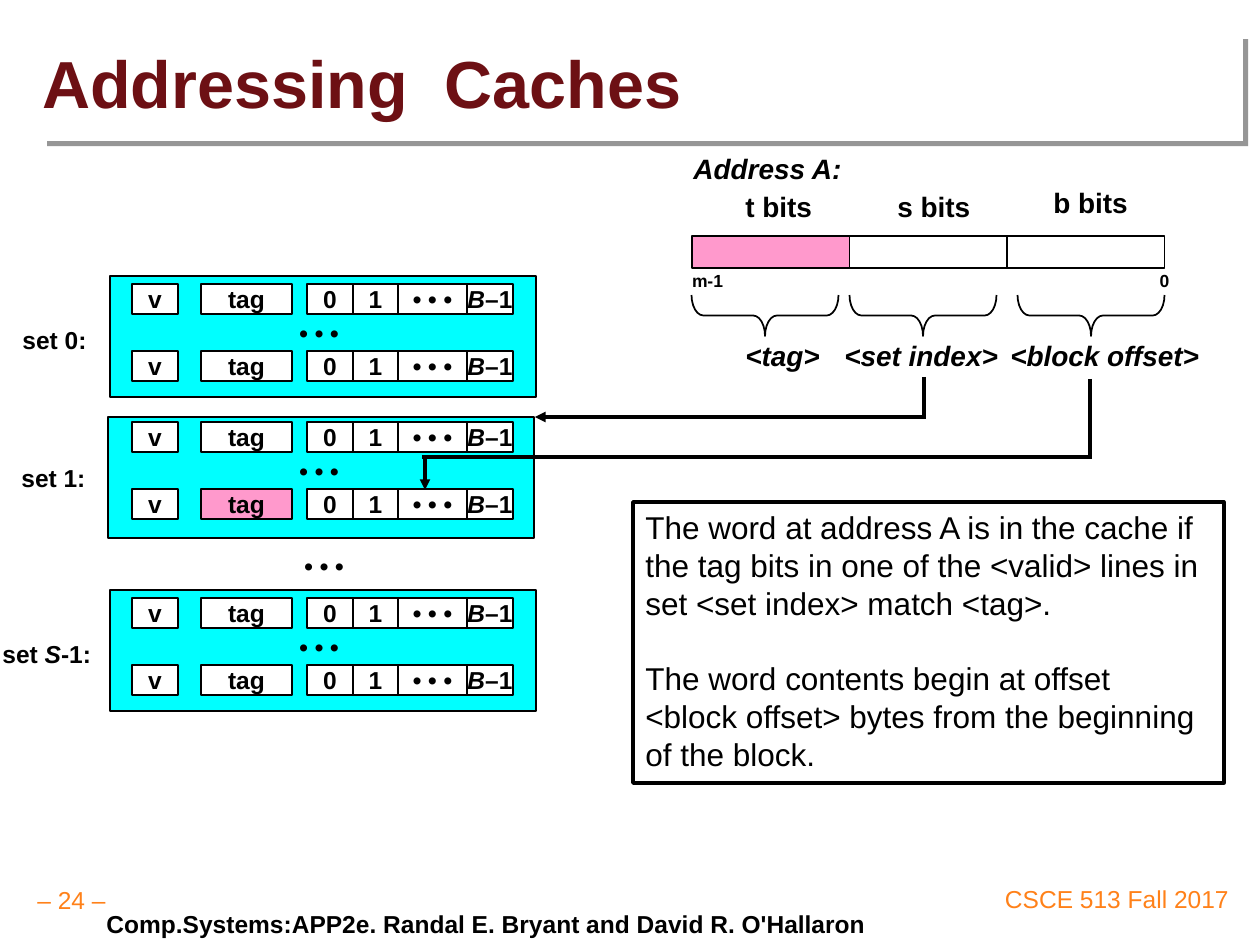
from lxml import etree
from pptx import Presentation
from pptx.dml.color import RGBColor
from pptx.enum.shapes import MSO_CONNECTOR, MSO_SHAPE
from pptx.enum.text import MSO_ANCHOR, MSO_AUTO_SIZE, PP_ALIGN
from pptx.oxml import parse_xml
from pptx.oxml.ns import nsdecls, qn
from pptx.util import Emu, Pt

SCALE = 914400 / 126
FONT = "Arial"
RECT, BRACE = MSO_SHAPE.RECTANGLE, MSO_SHAPE.RIGHT_BRACE
LINE = MSO_CONNECTOR.STRAIGHT
LEFT, CENTER = PP_ALIGN.LEFT, PP_ALIGN.CENTER
TOP, MIDDLE = MSO_ANCHOR.TOP, MSO_ANCHOR.MIDDLE

BLACK = RGBColor(0, 0, 0)
WHITE = RGBColor(255, 255, 255)
CYAN = RGBColor(0, 255, 255)
PINK = RGBColor(0xFF, 0x99, 0xCC)
MAROON = RGBColor(0x6D, 0x10, 0x14)
ORANGE = RGBColor(0xFF, 0x81, 0x19)

DOTS = "• • •"
LAST = [("B", True), ("–1", False)]
CELLS = [("v", 132, 46), ("tag", 201, 91), ("0", 307, 46),
         ("1", 353, 45), (DOTS, 398, 69), (LAST, 467, 46)]
ROW_GAP, ROW_H = 67, 30


def px(n):
    return Emu(round(n * SCALE))


def write(shape, text, size=14, align=LEFT, anchor=MIDDLE, bold=True,
          italic=False, color=BLACK, inset=None):
    """Fill a shape with one paragraph: a string, or (text, italic) runs."""
    frame = shape.text_frame
    frame.word_wrap = False
    frame.vertical_anchor = anchor
    if inset is not None:
        frame.margin_left = frame.margin_right = px(inset)
        frame.margin_top = frame.margin_bottom = px(inset)
    para = frame.paragraphs[0]
    para.alignment = align
    if isinstance(text, str):
        para.text = text
        para.font.italic = italic
    else:
        for part, slant in text:
            run = para.add_run()
            run.text = part
            run.font.italic = slant
    style(para, size, bold, color)
    return para


def style(para, size, bold, color):
    font = para.font
    font.name, font.size, font.bold = FONT, Pt(size), bold
    font.color.rgb = color


def add_label(slide, text, x, y, w, h, **look):
    box = slide.shapes.add_textbox(px(x), px(y), px(w), px(h))
    return write(box, text, **look)


def add_box(slide, x, y, w, h, fill=None, width=1, kind=RECT):
    box = slide.shapes.add_shape(kind, px(x), px(y), px(w), px(h))
    box.shadow.inherit = False
    if fill is None:
        box.fill.background()
    else:
        box.fill.solid()
        box.fill.fore_color.rgb = fill
    box.line.color.rgb = BLACK
    box.line.width = Pt(width)
    return box


def add_line(slide, x1, y1, x2, y2, arrow=False):
    line = slide.shapes.add_connector(LINE, px(x1), px(y1), px(x2), px(y2))
    line.line.color.rgb = BLACK
    line.line.width = Pt(2)
    if arrow:
        tip = etree.SubElement(line.line._get_or_add_ln(), qn("a:tailEnd"))
        tip.set("type", "triangle")
    etree.SubElement(line._element.spPr, qn("a:effectLst"))


def add_title(slide):
    title = slide.shapes.title
    title.left, title.top = px(42), px(34)
    title.width, title.height = px(1201), px(107)
    title.fill.solid()
    title.fill.fore_color.rgb = WHITE
    title.text_frame.auto_size = MSO_AUTO_SIZE.NONE
    para = write(title, "Addressing  Caches", 38, color=MAROON, inset=0)
    para.line_spacing = 0.87
    title._element.spPr.append(parse_xml(
        f'<a:effectLst {nsdecls("a")}><a:outerShdw dist="53340" dir="2700000"'
        ' algn="ctr" rotWithShape="0"><a:srgbClr val="969696"/>'
        '</a:outerShdw></a:effectLst>'))


def add_address(slide):
    add_label(slide, "Address A:", 680, 145, 175, 47, size=16,
              align=CENTER, italic=True)
    for i, fill in enumerate((PINK, None, None)):
        add_box(slide, 692 + 157.5 * i, 236, 157.5, 32, fill)
    for text, x, y, w in (("t bits", 733, 183, 92), ("s bits", 885, 183, 98),
                          ("b bits", 1041, 179, 100)):
        add_label(slide, text, x, y, w, 45, size=16, anchor=TOP)
    for text, x, w in (("m-1", 679, 57), ("0", 1147, 35)):
        add_label(slide, text, x, 263, w, 34, size=10, align=CENTER)
    for text, x, w, mid in (("<tag>", 733, 100, 765),
                            ("<set index>", 832, 179, 923),
                            ("<block offset>", 998, 215, 1091)):
        add_label(slide, text, x, 332, w, 45, size=16, anchor=TOP, italic=True)
        brace = add_box(slide, mid - 20.5, 242, 41, 147, kind=BRACE)
        brace.adjustments[0] = 0.29
        brace.rotation = 90


def add_set(slide, name, x, y, row, label_x, label_w, hit=False):
    """Draw one cache set; hit marks the tag of its last line."""
    add_box(slide, x, y, 426, 121, CYAN)
    for i in range(2):
        for text, left, w in CELLS:
            fill = PINK if hit and i == 1 and text == "tag" else WHITE
            cell = add_box(slide, left, row + ROW_GAP * i, w, ROW_H, fill)
            write(cell, text, align=CENTER)
    add_label(slide, name, label_x, row + 35, label_w, 42)
    add_label(slide, DOTS, 287, row + 34, 68, ROW_H)


def add_note(slide):
    box = add_box(slide, 633, 502, 591, 281, width=2)
    write(box, "The word at address A is in the cache if\v"
          "the tag bits in one of the <valid> lines in\v"
          "set <set index> match <tag>.", 18, anchor=TOP, bold=False)
    second = box.text_frame.add_paragraph()
    second.text = ("The word contents begin at offset\v"
                   "<block offset> bytes from the beginning\vof the block.")
    second.alignment = LEFT
    second.space_before = Pt(21.5)
    style(second, 18, False, BLACK)


def add_footer(slide):
    for text, x, y, w in (("– 24 –", 30, 882, 83),
                          ("CSCE 513 Fall 2017", 998, 881, 238)):
        para = add_label(slide, text, x, y, w, 39, align=CENTER, bold=False,
                         color=ORANGE, inset=6)
        para.line_spacing = 0.9
    add_label(slide, "Comp.Systems:APP2e. Randal E. Bryant and "
              "David R. O'Hallaron", 94, 903, 789, 42, anchor=TOP)


def main():
    deck = Presentation()
    deck.slide_width, deck.slide_height = px(1260), px(945)
    slide = deck.slides.add_slide(deck.slide_layouts[5])
    add_title(slide)
    add_address(slide)
    add_set(slide, "set 0:", 110, 276, 284, 10, 92)
    add_set(slide, "set 1:", 108, 417, 422, 9, 92, hit=True)
    add_set(slide, [("set ", False), ("S", True), ("-1:", False)],
            110, 590, 598, -10, 120)
    add_label(slide, DOTS, 292, 551, 68, ROW_H)
    add_line(slide, 924, 377, 924, 419)
    add_line(slide, 926, 417, 535, 417, arrow=True)
    add_line(slide, 1090, 379, 1090, 459)
    add_line(slide, 1090, 457, 422, 457)
    add_line(slide, 425, 459, 425, 490, arrow=True)
    add_note(slide)
    add_footer(slide)
    deck.save("out.pptx")


if __name__ == "__main__":
    main()
